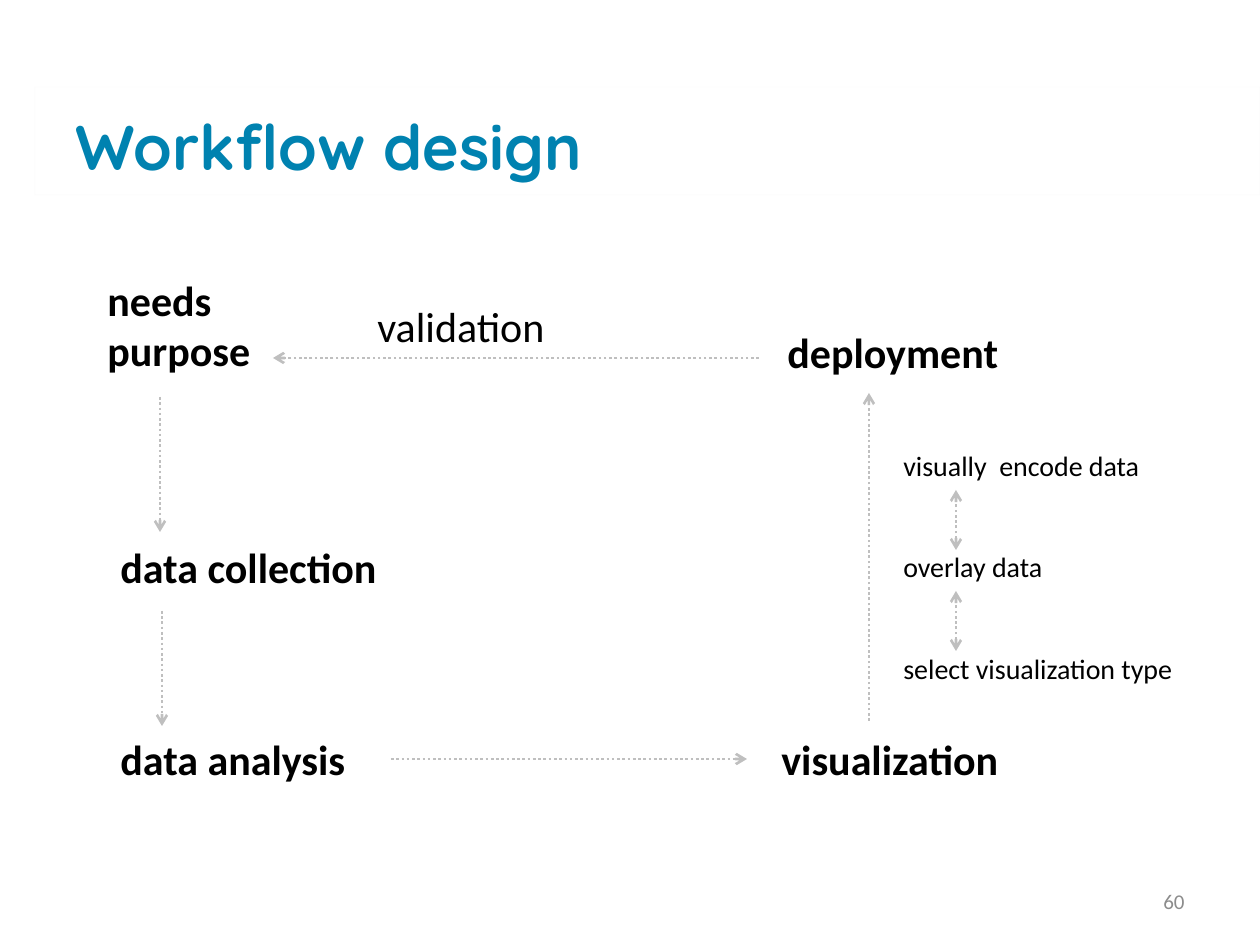
from lxml.etree import SubElement
from pptx import Presentation
from pptx.dml.color import RGBColor
from pptx.enum.dml import MSO_LINE
from pptx.enum.shapes import MSO_CONNECTOR, MSO_SHAPE
from pptx.enum.text import MSO_ANCHOR, PP_ALIGN
from pptx.oxml.ns import qn
from pptx.util import Emu, Pt

HUES = {"white": "FFFFFF", "edge": "F2F2F2", "title": "0082B0",
        "ink": "000000", "arrow": "BFBFBF", "page": "8C8C8C"}
SCALE = 914400 / 126


def px(*nums):
    return [Emu(round(n * SCALE)) for n in nums]


def hue(name):
    return RGBColor.from_string(HUES[name])


def style(item, form):
    for key, val in form.items():
        setattr(item, key, val)


def write(slide, box, lines, size, color="ink", bold=False, face="Calibri",
          frame=None, para=None, gap=0):
    text = slide.shapes.add_textbox(*px(*box)).text_frame
    style(text, {"word_wrap": True, **(frame or {})})
    for i, line in enumerate(lines):
        par = text.paragraphs[0] if i == 0 else text.add_paragraph()
        par.text = line
        style(par, para or {})
        if i:
            par.space_before = Pt(gap)
        for run in par.runs:
            style(run.font, {"name": face, "size": Pt(size), "bold": bold})
            run.font.color.rgb = hue(color)


def arrow(slide, start, end, both=False):
    link = slide.shapes.add_connector(MSO_CONNECTOR.STRAIGHT,
                                      *px(*start, *end))
    link.line.color.rgb = hue("arrow")
    style(link.line, {"width": Pt(1.5), "dash_style": MSO_LINE.ROUND_DOT})
    props = link.element.spPr
    edge = props.find(qn("a:ln"))
    for tag in ("a:headEnd", "a:tailEnd") if both else ("a:tailEnd",):
        SubElement(edge, qn(tag), type="arrow")
    SubElement(props, qn("a:effectLst"))


def header(slide, box):
    left, top, wide, high = box
    band = slide.shapes.add_shape(MSO_SHAPE.RECTANGLE, *px(*box))
    band.shadow.inherit = False
    band.fill.solid()
    band.fill.fore_color.rgb = hue("white")
    band.line.color.rgb = hue("edge")
    band.line.width = Pt(0.25)
    tint = band.element.spPr.find(qn("a:ln")).find(".//" + qn("a:srgbClr"))
    SubElement(tint, qn("a:alpha"), val="34000")
    write(slide, (left + 28, top - 20, wide - 91, high + 49),
          ["Workflow design"], 36, "title", True, "Quicksand",
          {"vertical_anchor": MSO_ANCHOR.MIDDLE})


def flow(slide, left, top):
    steps = [("needs\vpurpose", 0, 0, 170, 115, True),
             ("validation", 270, 26, 200, 63, False),
             ("deployment", 680, 52, 238, 63, True),
             ("data collection", 13, 267, 289, 63, True),
             ("data analysis", 13, 459, 257, 63, True),
             ("visualization", 674, 459, 244, 63, True)]
    for name, x, y, wide, high, bold in steps:
        write(slide, (left + x, top + y, wide, high), [name], 24, bold=bold,
              frame={"word_wrap": False})
    links = [(65, 129, 65, 264), (67, 343, 67, 458), (296, 491, 652, 491),
             (774, 453, 774, 125), (664, 90, 178, 90)]
    for x, y, right, low in links:
        arrow(slide, (left + x, top + y), (left + right, top + low))


def notes(slide, box):
    left, top = box[:2]
    lines = ["visually  encode data", "overlay data",
             "select visualization type"]
    write(slide, box, lines, 16, gap=39)
    for i in range(len(lines) - 1):
        x, y = left + 65, top + 48 + 101 * i
        arrow(slide, (x, y + 60), (x, y), True)


def footer(slide, box):
    write(slide, box, ["60"], 12, "page",
          frame={"vertical_anchor": MSO_ANCHOR.MIDDLE},
          para={"alignment": PP_ALIGN.RIGHT})


def main():
    deck = Presentation()
    wide, high = px(1260, 945)
    style(deck, {"slide_width": wide, "slide_height": high})
    slide = deck.slides.add_slide(deck.slide_layouts[6])
    header(slide, (35, 87, 1225, 108))
    flow(slide, 95, 268)
    notes(slide, (891, 442, 305, 251))
    footer(slide, (903, 876, 294, 50))
    deck.save("out.pptx")


if __name__ == "__main__":
    main()
